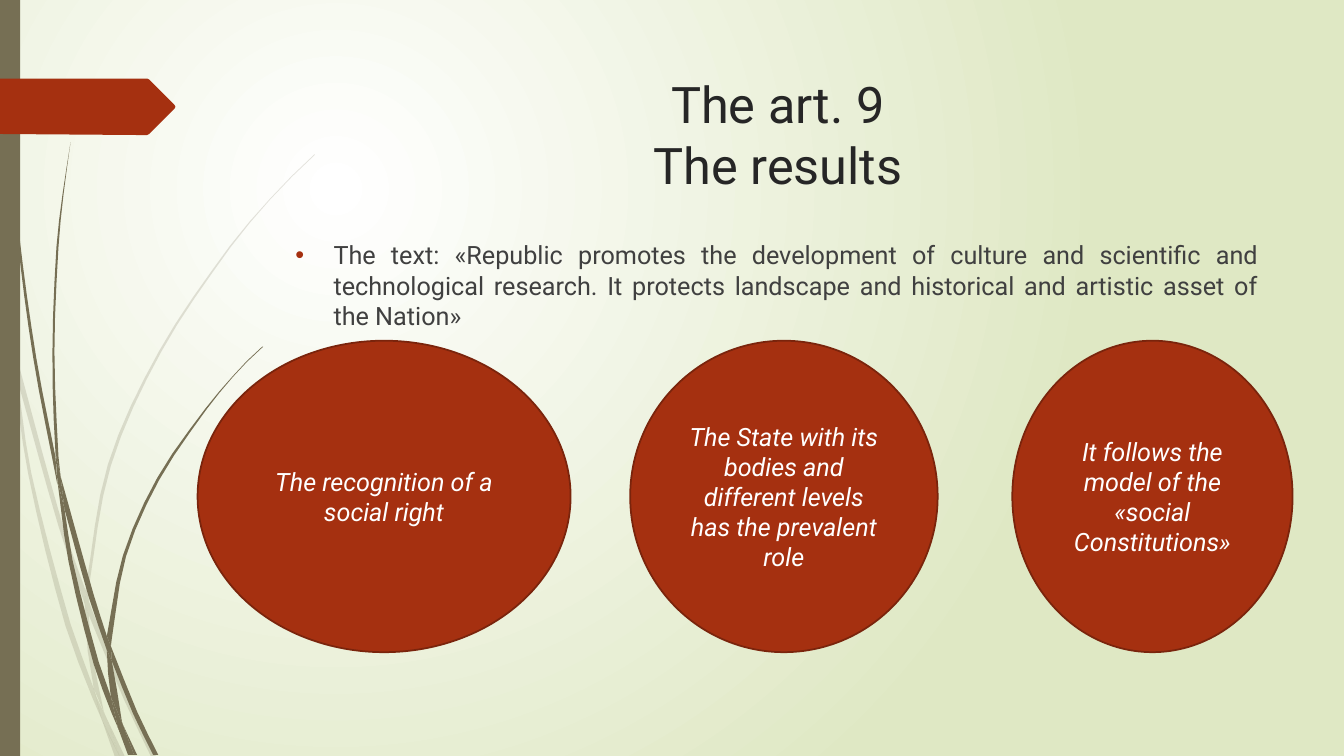
import math

from lxml import etree
from pptx import Presentation
from pptx.dml.color import RGBColor
from pptx.enum.shapes import MSO_SHAPE
from pptx.enum.text import MSO_ANCHOR, PP_ALIGN
from pptx.oxml.ns import qn
from pptx.util import Pt

PX = 9144  # EMU; 100 px to the inch
FONT = "Roboto"
CURVE_STEP = 40  # longest straight stretch of a curve, in px
RECTANGLE = MSO_SHAPE.RECTANGLE
ELLIPSE = MSO_SHAPE.OVAL
TOP, MIDDLE = MSO_ANCHOR.TOP, MSO_ANCHOR.MIDDLE
CENTER, JUSTIFY = PP_ALIGN.CENTER, PP_ALIGN.JUSTIFY
COLORS = {
    "white": "FFFFFF",
    "pale green": "DFE8C4",
    "olive": "766F54",
    "red": "A53010",
    "dark red": "7A240C",
    "title": "262626",
    "body": "404040",
}
COLORS = {name: RGBColor.from_string(value) for name, value in COLORS.items()}

# Each piece of grass is bounded by two smooth edges, one down and one back.
PALE_GRASS = [
    ([(11, 350), (9, 322), (0, 282)], [(0, 299), (10, 344), (11, 350)]),
    ([(14, 345), (62, 520), (85, 586)], [(84, 599), (58, 522), (17, 376)]),
    ([(88, 596), (92, 607), (127, 692), (155, 751)],
     [(150, 751), (123, 694), (88, 610)]),
    ([(105, 711), (124, 751)], [(119, 751), (105, 711)]),
    ([(11, 350), (17, 376), (31, 469), (70, 619), (93, 683), (101, 714)],
     [(92, 693), (65, 621), (28, 470), (11, 350)]),
    ([(84, 599), (87, 646), (93, 683), (105, 711)],
     [(103, 706), (91, 646), (88, 610)]),
    ([(88, 596), (88, 584), (110, 462), (160, 349), (229, 245), (268, 198),
      (290, 175), (312, 154)],
     [(312, 153), (289, 175), (268, 197), (228, 244), (158, 348), (107, 461),
      (85, 584), (85, 586)]),
    ([(101, 714), (114, 751)], [(119, 751), (101, 714)]),
    ([(88, 610), (88, 596)], [(85, 586), (84, 599)]),
    ([(93, 683), (99, 707), (101, 714), (119, 751)],
     [(105, 711), (96, 692), (93, 683)]),
]
DARK_GRASS = [
    ([(3, 0), (4, 48), (7, 110), (17, 233), (33, 355), (57, 481)],
     [(55, 453), (36, 355), (19, 232), (8, 109), (5, 48), (4, 0)]),
    ([(60, 472), (93, 590), (106, 631)], [(106, 645), (88, 592), (64, 505)]),
    ([(110, 641), (136, 706), (157, 749)],
     [(152, 749), (132, 708), (111, 656)]),
    ([(57, 477), (64, 505), (72, 556), (98, 657), (110, 691), (117, 722)],
     [(111, 708), (93, 659), (68, 557), (57, 477)]),
    ([(60, 472), (58, 453), (54, 349), (58, 245), (63, 193), (70, 141)],
     [(70, 141), (62, 193), (56, 245), (52, 349), (55, 449), (60, 472)]),
    ([(122, 719), (136, 749)], [(133, 749), (122, 719)]),
    ([(55, 449), (57, 477), (64, 505)], [(60, 472), (55, 449)]),
    ([(110, 641), (111, 633), (125, 552), (158, 476), (205, 406), (231, 374),
      (245, 359), (261, 344)],
     [(260, 344), (245, 358), (231, 373), (204, 405), (156, 474), (122, 551),
      (106, 631)]),
    ([(117, 722), (127, 749)], [(131, 749), (117, 722)]),
    ([(106, 645), (110, 691), (122, 719)], [(121, 716), (111, 656), (106, 645)]),
    ([(106, 631), (106, 645), (111, 656)], [(110, 641), (106, 631)]),
    ([(110, 691), (117, 722), (130, 749)], [(133, 749), (122, 719), (110, 691)]),
]
FLAG = [(0, 78), (146, 78), (148, 79), (173, 104), (174, 106), (173, 108),
        (148, 133), (146, 134), (136, 134), (0, 133)]

TITLE_LINES = ["The art. 9", "The results"]
BODY = ("The text: «Republic promotes the development of culture and scientific "
        "and technological research. It protects landscape and historical and "
        "artistic asset of the Nation»")
RESULTS = [
    (196, 370, "The recognition of a social right"),
    (625, 305, "The State with its bodies and different levels has the prevalent role"),
    (1004, 278, "It follows the model of the «social Constitutions»"),
]


def smooth(edge):
    """Return points on a smooth curve through an edge, at most a step apart."""
    slopes = []
    for index in range(len(edge)):
        before, after = edge[max(index - 1, 0)], edge[min(index + 1, len(edge) - 1)]
        length = math.dist(before, after)
        slopes.append([(b - a) / length for a, b in zip(before, after)])
    points = [edge[0]]
    for index, (start, end) in enumerate(zip(edge, edge[1:])):
        chord = math.dist(start, end)
        steps = math.ceil(chord / CURVE_STEP)
        for step in range(1, steps + 1):
            t = step / steps
            points.append(tuple(
                (2 * t**3 - 3 * t**2 + 1) * start[axis]
                + (3 * t**2 - 2 * t**3) * end[axis]
                + (t**3 - 2 * t**2 + t) * chord * slopes[index][axis]
                + (t**3 - t**2) * chord * slopes[index + 1][axis]
                for axis in (0, 1)))
    return points


def add_outline(points, color):
    corners = [(round(x * PX), round(y * PX)) for x, y in points]
    builder = slide.shapes.build_freeform(*corners[0])
    builder.add_line_segments(corners[1:], close=True)
    shape = builder.convert_to_shape()
    shape.shadow.inherit = False
    shape.fill.solid()
    shape.fill.fore_color.rgb = COLORS[color]
    shape.line.fill.background()
    return shape


presentation = Presentation()
presentation.slide_width = 1333 * PX
presentation.slide_height = 750 * PX
slide = presentation.slides.add_slide(presentation.slide_layouts[6])

# Background: circular gradient around the upper left
background = slide.background.fill
background.gradient()
for stop, position, color in zip(background.gradient_stops, (0, 1), ("white", "pale green")):
    stop.position = position
    stop.color.rgb = COLORS[color]
gradient = slide.element.find(".//" + qn("a:gradFill"))
linear = gradient.find(qn("a:lin"))
circle = etree.Element(qn("a:path"), {"path": "circle"})
etree.SubElement(circle, qn("a:fillToRect"), l="50000", t="50000", r="100000", b="100000")
gradient.replace(linear, circle)

# Grass, side bar and flag
for pieces, opacity in ((PALE_GRASS, 20), (DARK_GRASS, 100)):
    for down, back in pieces:
        grass = add_outline(smooth(down) + smooth(back), "olive")
        if opacity < 100:
            color_element = grass.element.spPr.find(".//" + qn("a:srgbClr"))
            etree.SubElement(color_element, qn("a:alpha"), val=str(opacity * 1000))

side_bar = slide.shapes.add_shape(RECTANGLE, 0, 0, 20 * PX, 750 * PX)
side_bar.shadow.inherit = False
side_bar.fill.solid()
side_bar.fill.fore_color.rgb = COLORS["olive"]
side_bar.line.fill.background()
add_outline(FLAG, "red")

# Title, body and results
title = slide.shapes.add_textbox(284 * PX, 68 * PX, 975 * PX, 140 * PX)
body = slide.shapes.add_textbox(283 * PX, 233 * PX, 975 * PX, 413 * PX)
texts = [
    (title, TITLE_LINES, 36, "title", CENTER, TOP, False),
    (body, [BODY], 18, "body", JUSTIFY, TOP, False),
]
for left, width, result in RESULTS:
    ellipse = slide.shapes.add_shape(ELLIPSE, left * PX, 338 * PX, width * PX, 309 * PX)
    ellipse.shadow.inherit = False
    ellipse.fill.solid()
    ellipse.fill.fore_color.rgb = COLORS["red"]
    ellipse.line.color.rgb = COLORS["dark red"]
    ellipse.line.width = Pt(1.25)
    texts.append((ellipse, [result], 18, "white", CENTER, MIDDLE, True))

for shape, lines, size, color, alignment, anchor, italic in texts:
    shape.text_frame.word_wrap = True
    shape.text_frame.vertical_anchor = anchor
    paragraph = shape.text_frame.paragraphs[0]
    paragraph.alignment = alignment
    for number, line in enumerate(lines):
        if number:
            paragraph.add_line_break()
        run = paragraph.add_run()
        run.text = line
        run.font.name = FONT
        run.font.size = Pt(size)
        run.font.italic = italic
        run.font.color.rgb = COLORS[color]

bullet_paragraph = body.text_frame.paragraphs[0]
bullet_paragraph.space_before = Pt(10)
properties = bullet_paragraph._p.get_or_add_pPr()
properties.set("marL", str(38 * PX))
properties.set("indent", str(-38 * PX))
bullet_color = etree.SubElement(properties, qn("a:buClr"))
etree.SubElement(bullet_color, qn("a:srgbClr"), val=str(COLORS["red"]))
etree.SubElement(properties, qn("a:buFont"), typeface="Arial")
etree.SubElement(properties, qn("a:buChar"), char="•")

presentation.save("out.pptx")
